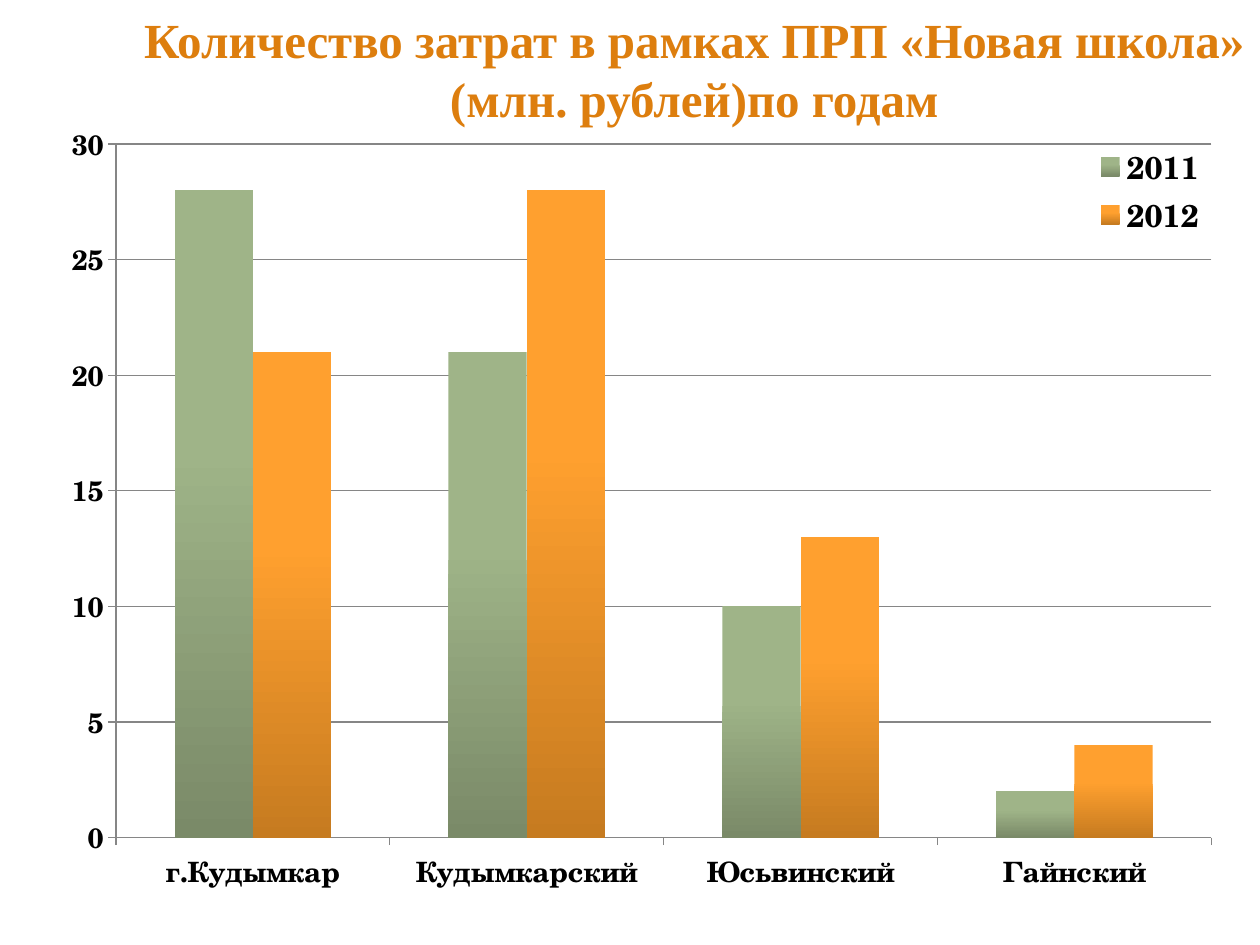
from pptx import Presentation
from pptx.chart.data import CategoryChartData
from pptx.dml.color import RGBColor
from pptx.enum.chart import XL_CHART_TYPE as ChartType, XL_LEGEND_POSITION as LegendPosition
from pptx.enum.chart import XL_TICK_MARK as TickMark
from pptx.enum.text import MSO_ANCHOR as Anchor, PP_ALIGN as Align, MSO_AUTO_SIZE as AutoSize
from pptx.oxml import parse_xml
from pptx.oxml.ns import nsdecls
from pptx.util import Inches, Pt


def rgb(value):
    return RGBColor.from_string(value)


def manual_layout(left, top, width, height, inner=False):
    target = '<c:layoutTarget val="inner"/>' if inner else ""
    return parse_xml(
        f'<c:layout {nsdecls("c")}><c:manualLayout>{target}'
        '<c:xMode val="edge"/><c:yMode val="edge"/>'
        f'<c:x val="{left}"/><c:y val="{top}"/><c:w val="{width}"/><c:h val="{height}"/>'
        '</c:manualLayout></c:layout>')


deck = Presentation()
deck.slide_width, deck.slide_height = Inches(10), Inches(7.5)
page = deck.slides.add_slide(deck.slide_layouts[5])

title = page.shapes.title
title.left, title.top = Inches(1.02), Inches(0.23)
title.width, title.height = Inches(8.98), Inches(0.62)
frame_format = {"word_wrap": True, "auto_size": AutoSize.NONE, "vertical_anchor": Anchor.MIDDLE,
                "margin_left": Inches(0.05), "margin_right": Inches(0.05)}
for name, value in frame_format.items():
    setattr(title.text_frame, name, value)

para = title.text_frame.paragraphs[0]
para.alignment = Align.CENTER
for index, line in enumerate(["Количество затрат в рамках ПРП «Новая школа»", "(млн. рублей)по годам"]):
    if index:
        para.add_line_break()
    span = para.add_run()
    span.text = line
    for name, value in {"size": Pt(28), "bold": True}.items():
        setattr(span.font, name, value)
    span.font.color.rgb = rgb("DD7E0E")
    span.font.fill._xPr.append(parse_xml(
        f'<a:effectLst {nsdecls("a")}><a:outerShdw blurRad="38100" dist="38100" dir="2700000" algn="tl">'
        '<a:srgbClr val="000000"><a:alpha val="43000"/></a:srgbClr></a:outerShdw></a:effectLst>'))
    span.font.name = "Times New Roman"

data = CategoryChartData()
data.categories = ["г.Кудымкар", "Кудымкарский", "Юсьвинский", "Гайнский"]
data.add_series("2011", [28, 21, 10, 2])
data.add_series("2012", [21, 28, 13, 4])
chart = page.shapes.add_chart(ChartType.COLUMN_CLUSTERED, Inches(0.31), Inches(0.94),
                              Inches(9.38), Inches(6.33), data).chart
chart.has_title = False
chart.font.size = Pt(18)
chart.font.name = "Arial"
chart.font.color.rgb = rgb("000000")

plot = chart.plots[0]
plot.gap_width = 150
plot.overlap = 0
plot.vary_by_categories = False
for series, colors in zip(plot.series, [("9FB488", "7A8A68"), ("FFA02F", "C67B20")]):
    fill = series.format.fill
    fill.gradient()
    fill.gradient_angle = 270
    for stop, color, position in zip(fill.gradient_stops, colors, (0.4, 1)):
        stop.color.rgb = rgb(color)
        stop.position = position

chart.has_legend = True
legend = chart.legend
legend.position = LegendPosition.RIGHT
legend.include_in_layout = False

for axis in (chart.category_axis, chart.value_axis):
    axis.major_tick_mark = TickMark.OUTSIDE
    axis.minor_tick_mark = TickMark.NONE
    axis.format.line.color.rgb = rgb("868686")
    axis.format.line.width = Pt(0.75)

fonts = [(chart.category_axis.tick_labels.font, 16), (chart.value_axis.tick_labels.font, 16), (legend.font, 18)]
for font, size in fonts:
    for name, value in {"size": Pt(size), "bold": True, "name": "TeX Gyre Schola"}.items():
        setattr(font, name, value)
    font.color.rgb = rgb("000000")

values = chart.value_axis
values.minimum_scale, values.maximum_scale, values.major_unit = 0, 30, 5
values.has_major_gridlines = True
values.major_gridlines.format.line.color.rgb = rgb("868686")
values.major_gridlines.format.line.width = Pt(0.75)

plot_area = chart._chartSpace.chart.plotArea
for old in plot_area.xpath("c:layout"):
    plot_area.remove(old)
plot_area.insert(0, manual_layout(0.065, 0.032, 0.927, 0.87, inner=True))
for old in legend._element.xpath("c:layout"):
    legend._element.remove(old)
legend._element.xpath("c:legendPos")[0].addnext(manual_layout(0.89, 0.03, 0.1, 0.12))

deck.save("out.pptx")
